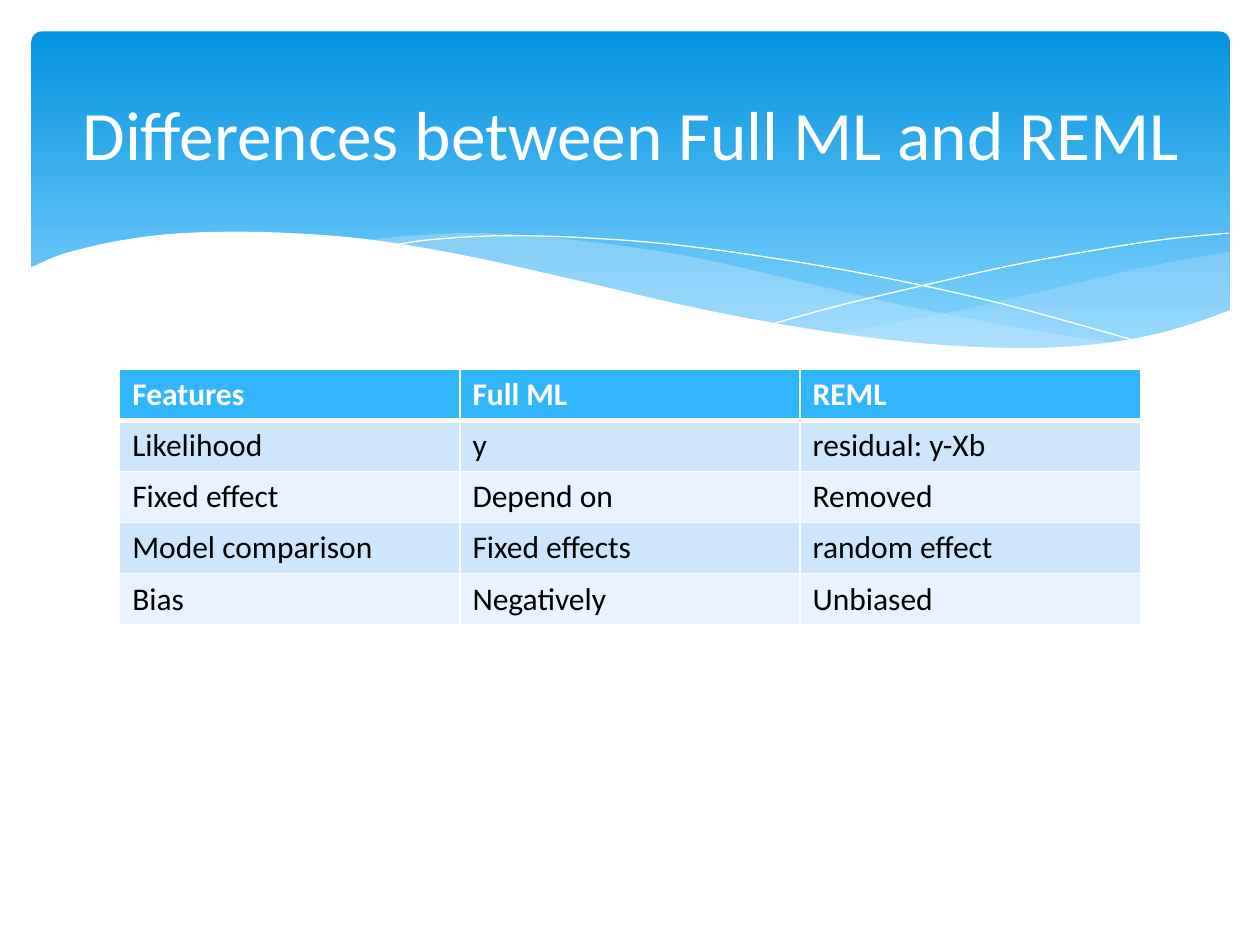
"""Build a slide that compares Full ML and REML in a table under a wavy banner."""
from lxml.etree import SubElement as Sub
from pptx import Presentation
from pptx.dml.color import RGBColor as RGB
from pptx.enum.shapes import MSO_SHAPE as Kind
from pptx.enum.text import MSO_ANCHOR as Anchor, PP_ALIGN as Align
from pptx.oxml.ns import qn
from pptx.util import Pt

PX = 9144
FONT = "Calibri"
HEX = {
    "top": "0293E0", "low": "83D3FE", "mist": "C6E7FC", "white": "FFFFFF",
    "black": "000000", "head": "31B6FD", "odd": "CEE5FE", "even": "E8F3FF",
}
RED = {name: RGB.from_string(code) for name, code in HEX.items()}


def smooth(knots, steps=6):
    ends = [knots[0], *knots, knots[-1]]
    dots = [knots[0]]
    for a, b, c, d in zip(ends, ends[1:], ends[2:], ends[3:]):
        for t in (n / steps for n in range(1, steps + 1)):
            dots.append(tuple(
                (2 * q + (r - p) * t + (2 * p - 5 * q + 4 * r - s) * t**2
                 + (3 * q - p - 3 * r + s) * t**3) / 2
                for p, q, r, s in zip(a, b, c, d)))
    return dots


def trace(dots, close):
    spots = [(round(x * PX), round(y * PX)) for x, y in dots]
    pen = slide.shapes.build_freeform(*spots[0], scale=1.0)
    pen.add_line_segments(spots[1:], close=close)
    form = pen.convert_to_shape()
    form.shadow.inherit = False
    return form


deck = Presentation()
deck.slide_width, deck.slide_height = 1000 * PX, 750 * PX
slide = deck.slides.add_slide(deck.slide_layouts[6])

band = slide.shapes.add_shape(
    Kind.ROUNDED_RECTANGLE, 25 * PX, 25 * PX, 951 * PX, 270 * PX)
band.adjustments[0] = 0.03
band.shadow.inherit = False
band.line.fill.background()
band.fill.gradient()
band.fill.gradient_angle = 270
for stop, place, name in zip(band.fill.gradient_stops, (0, 0.9), ("top", "low")):
    stop.position = place
    stop.color.rgb = RED[name]

mists = [
    (29, [(976, 200), (935, 207), (891, 216), (832, 230), (753, 248), (661, 265)],
     [(661, 265), (719, 272), (769, 277), (814, 278), (854, 276), (889, 272),
      (921, 265), (949, 257), (976, 247)]),
    (40, [(893, 273), (837, 265), (775, 254), (706, 240), (629, 222), (569, 208),
          (514, 198), (442, 189), (380, 185), (328, 187), (286, 191)],
     [(286, 191), (342, 199), (404, 211), (491, 232), (584, 252), (665, 266),
      (736, 275), (796, 278), (848, 277), (893, 273)]),
]
for alpha, upper, lower in mists:
    mist = trace(smooth(upper) + smooth(lower), True)
    mist.fill.solid()
    mist.fill.fore_color.rgb = RED["mist"]
    mist.line.fill.background()
    tint = mist.fill._xPr.find(qn("a:solidFill"))[0]
    Sub(tint, qn("a:alpha"), val=str(alpha * 1000))

threads = [
    [(309, 195), (344, 190), (401, 187), (469, 189), (533, 194), (608, 204),
     (695, 219), (795, 241), (907, 272)],
    [(613, 257), (672, 241), (748, 223), (806, 210), (866, 199), (924, 190),
     (975, 185)],
]
for knots in threads:
    thread = trace(smooth(knots), False)
    thread.fill.background()
    thread.line.color.rgb = RED["white"]
    thread.line.width = Pt(0)

crest = [
    (977, 246), (940, 259), (899, 269), (850, 275), (793, 276), (726, 272),
    (648, 262), (555, 245), (447, 220), (365, 202), (292, 190), (230, 185),
    (177, 184), (132, 186), (95, 191), (67, 197), (46, 203), (23, 213),
]
wave = trace(smooth(crest) + [(23, 329), (977, 329)], True)
wave.fill.solid()
wave.fill.fore_color.rgb = RED["white"]
wave.line.fill.background()

rows = [
    ("Features", "Full ML", "REML"),
    ("Likelihood", "y", "residual: y-Xb"),
    ("Fixed effect", "Depend on", "Removed"),
    ("Model comparison", "Fixed effects", "random effect"),
    ("Bias", "Negatively", "Unbiased"),
]
grid = slide.shapes.add_table(
    len(rows), 3, 95 * PX, 293 * PX, 810 * PX, 203 * PX).table
for i, row in enumerate(rows):
    shade = "head" if i == 0 else "odd" if i % 2 else "even"
    for j, word in enumerate(row):
        cell = grid.cell(i, j)
        cell.text = word
        font = cell.text_frame.paragraphs[0].font
        font.name, font.size, font.bold = FONT, Pt(18), i == 0
        font.color.rgb = RED["black" if i else "white"]
        props = cell._tc.get_or_add_tcPr()
        for side in "LRTB":
            thick = (i, side) in ((0, "B"), (1, "T"))
            edge = Sub(props, qn("a:ln" + side), w=str(Pt(3 if thick else 1)))
            Sub(Sub(edge, qn("a:solidFill")), qn("a:srgbClr"), val=HEX["white"])
        cell.fill.solid()
        cell.fill.fore_color.rgb = RED[shade]

title = slide.shapes.add_textbox(26 * PX, 37 * PX, 950 * PX, 137 * PX).text_frame
title.word_wrap = True
title.vertical_anchor = Anchor.MIDDLE
line = title.paragraphs[0]
line.text = "Differences between Full ML and REML"
line.alignment = Align.CENTER
line.font.name, line.font.size = FONT, Pt(39.6)
line.font.color.rgb = RED["white"]

deck.save("out.pptx")
